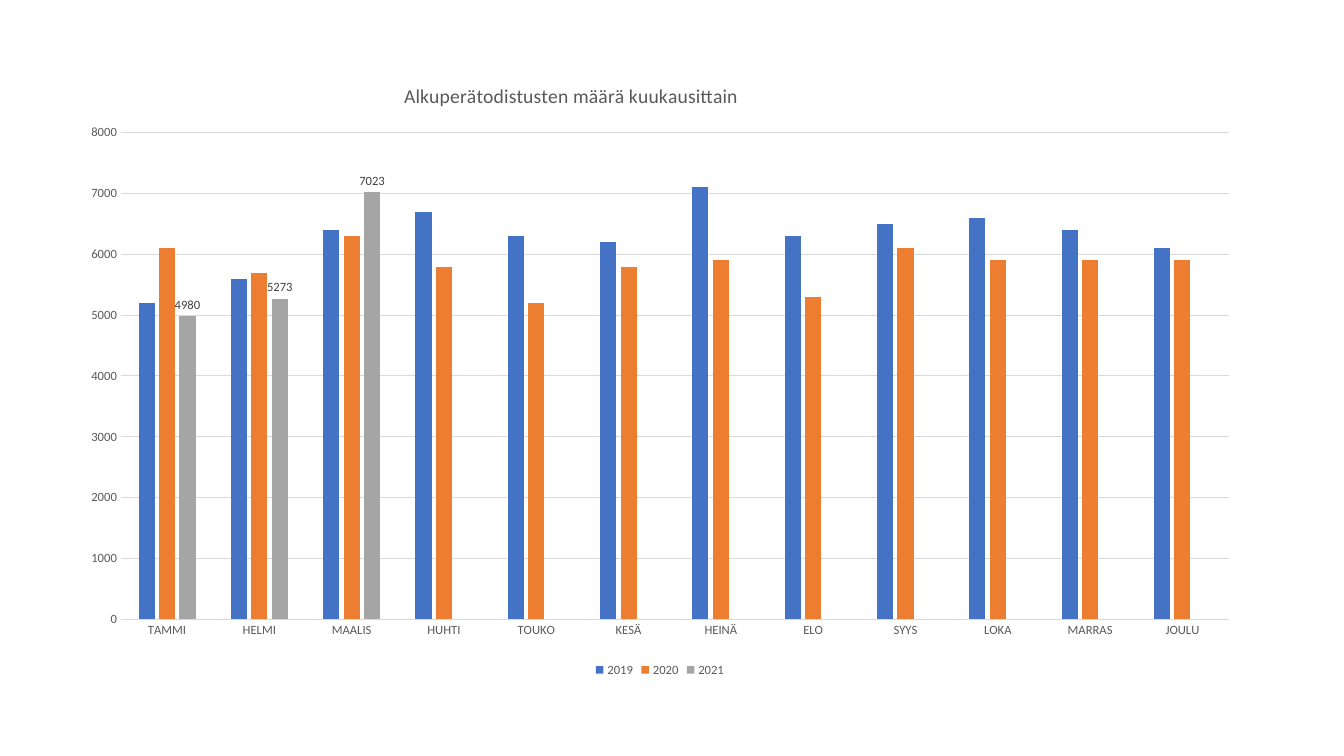
from lxml import etree
from pptx import Presentation, util as u
from pptx.chart.data import CategoryChartData
from pptx.dml.color import RGBColor
from pptx.enum import chart as kinds
from pptx.oxml.ns import qn

MONTHS = ["TAMMI", "HELMI", "MAALIS", "HUHTI", "TOUKO", "KESÄ",
          "HEINÄ", "ELO", "SYYS", "LOKA", "MARRAS", "JOULU"]
YEARS = {
    "2019": ("4472C4", [5200, 5600, 6400, 6700, 6300, 6200,
                        7100, 6300, 6500, 6600, 6400, 6100]),
    "2020": ("ED7D31", [6100, 5700, 6300, 5800, 5200, 5800,
                        5900, 5300, 6100, 5900, 5900, 5900]),
    "2021": ("A5A5A5", [4980, 5273, 7023] + [None] * 9),
}


def paint(target, color):
    target.rgb = RGBColor.from_string(color)


def assign(target, values):
    for name, value in values.items():
        setattr(target, name, value)


def place(parent, index, **shares):
    for old in parent.findall(qn("c:layout")):
        parent.remove(old)
    layout = etree.Element(qn("c:layout"))
    parent.insert(index, layout)
    manual = etree.SubElement(layout, qn("c:manualLayout"))
    values = {"xMode": "edge", "yMode": "edge"}
    if "w" in shares:
        values = {"layoutTarget": "inner", **values}
    values.update({key: str(share / 100) for key, share in shares.items()})
    for tag, value in values.items():
        etree.SubElement(manual, qn("c:" + tag)).set("val", value)


class Board:
    face = "Calibri"
    ink = "595959"
    rule = "D9D9D9"

    def __init__(self, deck):
        self.wide, self.high = deck.slide_width, deck.slide_height
        self.slide = deck.slides.add_slide(deck.slide_layouts[6])

    def font(self, font, size, color=ink):
        assign(font, {"name": self.face, "size": u.Pt(size), "bold": False})
        paint(font.color, color)

    def line(self, line):
        line.width = u.Pt(0.75)
        line.fill.solid()
        paint(line.color, self.rule)

    def bars(self, x, y, w, h):
        data = CategoryChartData(number_format="0")
        data.categories = MONTHS
        for year, (color, counts) in YEARS.items():
            data.add_series(year, counts)
        box = [int(share * side / 100) for share, side in
               zip((x, y, w, h), (self.wide, self.high) * 2)]
        chart = self.slide.shapes.add_chart(
            kinds.XL_CHART_TYPE.COLUMN_CLUSTERED, *box, data).chart
        self.font(chart.font, 10, "000000")
        plot = chart.plots[0]
        assign(plot, {"gap_width": 219, "overlap": -27,
                      "vary_by_categories": False})
        for series, (color, counts) in zip(plot.series, YEARS.values()):
            series.format.fill.solid()
            paint(series.format.fill.fore_color, color)
        self.marks(plot.series[2].data_labels)
        self.axes(chart)
        self.key(chart)
        return chart

    def marks(self, labels):
        assign(labels, {"show_value": True, "number_format": "0",
                        "number_format_is_linked": False,
                        "position": kinds.XL_LABEL_POSITION.OUTSIDE_END})
        self.font(labels.font, 9, "404040")

    def axes(self, chart):
        for axis in (chart.category_axis, chart.value_axis):
            assign(axis, {"major_tick_mark": kinds.XL_TICK_MARK.NONE,
                          "minor_tick_mark": kinds.XL_TICK_MARK.NONE})
            self.font(axis.tick_labels.font, 9)
        self.line(chart.category_axis.format.line)
        axis = chart.value_axis
        assign(axis, {"minimum_scale": 0, "maximum_scale": 8000,
                      "major_unit": 1000, "has_major_gridlines": True})
        assign(axis.tick_labels, {"number_format": "0",
                                  "number_format_is_linked": False})
        axis.format.line.fill.background()
        self.line(axis.major_gridlines.format.line)

    def key(self, chart):
        chart.has_legend = True
        assign(chart.legend, {"position": kinds.XL_LEGEND_POSITION.BOTTOM,
                              "include_in_layout": False})
        self.font(chart.legend.font, 9)

    def title(self, chart, words, x, y):
        chart.has_title = True
        frame = chart.chart_title.text_frame
        frame.text = words
        self.font(frame.paragraphs[0].runs[0].font, 14)
        place(chart.chart_title.element, 1, x=x, y=y)


def main():
    deck = Presentation()
    assign(deck, {"slide_width": u.Inches(13.33),
                  "slide_height": u.Inches(7.5)})
    board = Board(deck)
    chart = board.bars(5.03, 8.13, 88.15, 82)
    board.title(chart, "Alkuperätodistusten määrä kuukausittain", 28.1, 2.7)
    area = chart.element.find(".//" + qn("c:plotArea"))
    place(area, 0, x=4.5, y=11.5, w=93.5, h=78.5)
    deck.save("out.pptx")


if __name__ == "__main__":
    main()
